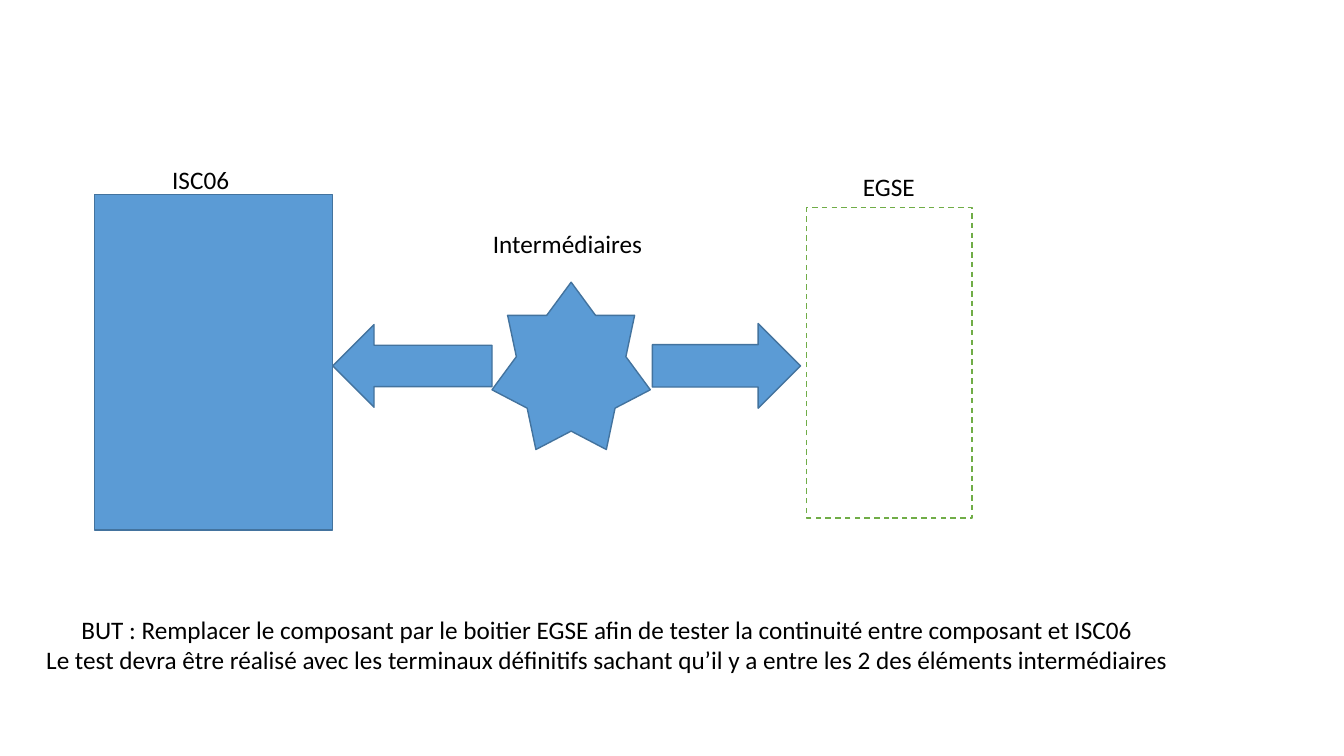
from pptx import Presentation
from pptx.dml.color import RGBColor
from pptx.enum.dml import MSO_LINE_DASH_STYLE as Dash
from pptx.enum.shapes import MSO_SHAPE as Shape
from pptx.enum.text import MSO_AUTO_SIZE as AutoSize, PP_ALIGN as Align
from pptx.util import Inches, Pt

COLORS = {"blue": "5B9BD5", "outline": "43739E", "green": "70AD47", "text": "000000"}


class SlideBuilder:
    text_format = {"name": "Calibri", "size": Pt(18)}
    frame_format = {"word_wrap": False, "auto_size": AutoSize.SHAPE_TO_FIT_TEXT}

    def __init__(self, slide):
        self.slide = slide

    def color(self, name):
        return RGBColor.from_string(COLORS[name])

    def apply(self, target, values):
        for name, value in values.items():
            setattr(target, name, value)

    def add_shape(self, kind, box, fill="blue", line="outline", dash=None):
        shape = self.slide.shapes.add_shape(kind, *map(Inches, box))
        shape.shadow.inherit = False
        if fill:
            shape.fill.solid()
            shape.fill.fore_color.rgb = self.color(fill)
        else:
            shape.fill.background()
        shape.line.color.rgb = self.color(line)
        self.apply(shape.line, {"width": Pt(1), "dash_style": dash})

    def add_text(self, lines, box, align=Align.LEFT):
        frame = self.slide.shapes.add_textbox(*map(Inches, box)).text_frame
        self.apply(frame, self.frame_format)
        frame.text = "\n".join(lines)
        for paragraph in frame.paragraphs:
            paragraph.alignment = align
            font = paragraph.runs[0].font
            self.apply(font, self.text_format)
            font.color.rgb = self.color("text")


def main():
    presentation = Presentation()
    presentation.slide_width = Inches(13.33)
    presentation.slide_height = Inches(7.5)
    builder = SlideBuilder(presentation.slides.add_slide(presentation.slide_layouts[6]))

    builder.add_shape(Shape.RECTANGLE, (8, 2.06, 1.64, 3.08),
                      fill=None, line="green", dash=Dash.DASH)
    builder.add_text(["EGSE"], (8.46, 1.65, 0.72, 0.4))
    builder.add_text(["ISC06"], (1.61, 1.58, 0.77, 0.4))
    builder.add_shape(Shape.RECTANGLE, (0.94, 1.93, 2.36, 3.33))
    builder.add_text(
        [
            "BUT : Remplacer le composant par le boitier EGSE afin de tester "
            "la continuité entre composant et ISC06",
            "Le test devra être réalisé avec les terminaux définitifs sachant "
            "qu’il y a entre les 2 des éléments intermédiaires",
        ],
        (0.29, 6.04, 11.46, 0.71),
        Align.CENTER,
    )
    builder.add_shape(Shape.STAR_7_POINT, (4.88, 2.8, 1.57, 1.66))
    builder.add_shape(Shape.LEFT_ARROW, (3.3, 3.22, 1.58, 0.82))
    builder.add_shape(Shape.RIGHT_ARROW, (6.47, 3.21, 1.47, 0.84))
    builder.add_text(["Intermédiaires"], (4.79, 2.22, 1.76, 0.4))

    presentation.save("out.pptx")


if __name__ == "__main__":
    main()
